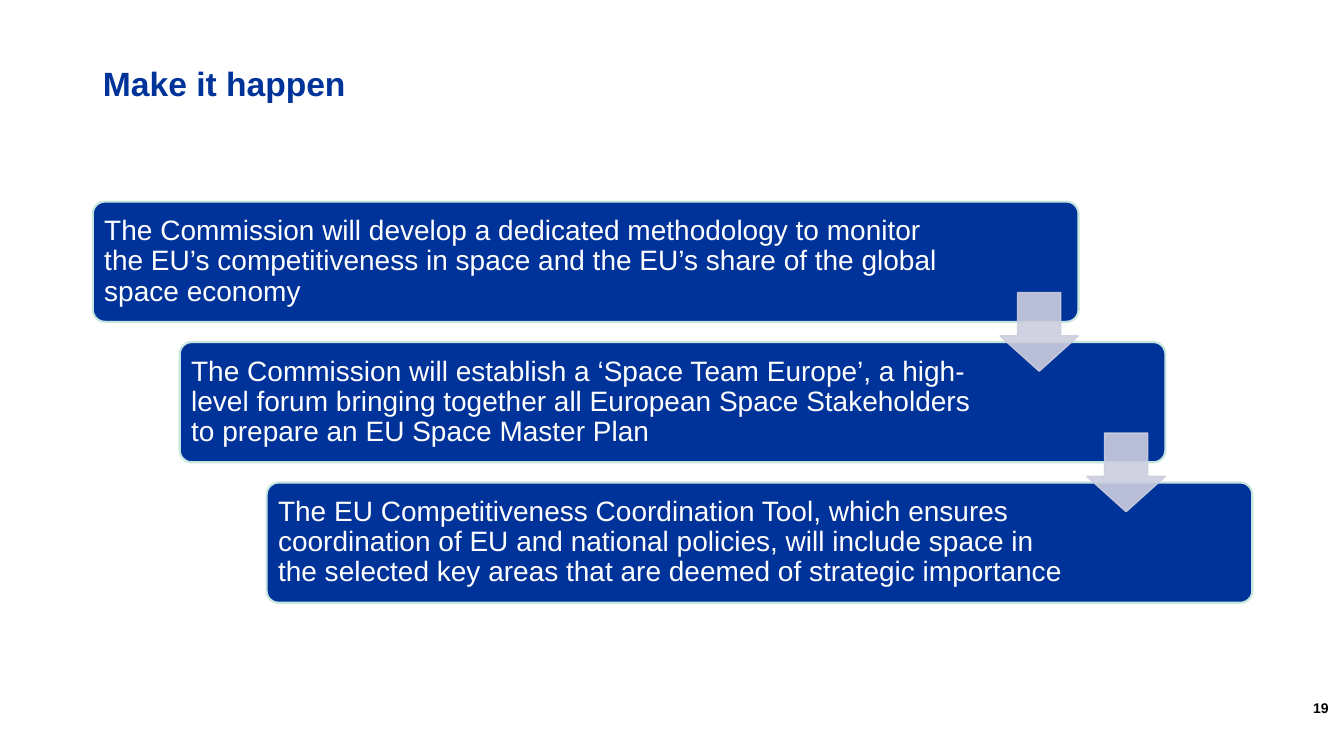
from lxml import etree
from pptx import Presentation
from pptx.dml.color import RGBColor
from pptx.enum.shapes import MSO_SHAPE
from pptx.enum.text import MSO_ANCHOR, MSO_AUTO_SIZE, PP_ALIGN
from pptx.oxml.ns import qn
from pptx.util import Cm, Pt

ROUND_RECT = MSO_SHAPE.ROUNDED_RECTANGLE
DOWN_ARROW = MSO_SHAPE.DOWN_ARROW
MIDDLE, BOTTOM = MSO_ANCHOR.MIDDLE, MSO_ANCHOR.BOTTOM
LEFT = PP_ALIGN.LEFT
NO_AUTOFIT = MSO_AUTO_SIZE.NONE

BLUE = RGBColor(0x00, 0x33, 0x99)
MINT = RGBColor(0xC6, 0xE5, 0xDF)
LAVENDER = RGBColor(0xCC, 0xCE, 0xDE)
WHITE = RGBColor(0xFF, 0xFF, 0xFF)
BLACK = RGBColor(0x00, 0x00, 0x00)
FONT = "Arial"

# Staircase geometry in centimetres
STEP_LEFT, STEP_TOP = 2.34, 5.08
STEP_W, STEP_H = 24.84, 3.03
SHIFT_X, SHIFT_Y = 2.19, 3.54
ARROW = 1.98
INSET = 0.2

# Each step: text and the right inset that keeps it clear of the arrows
STEPS = [
    ("The Commission will develop a dedicated methodology to monitor the EU’s "
     "competitiveness in space and the EU’s share of the global space economy", 3.3),
    ("The Commission will establish a ‘Space Team Europe’, a high-level forum "
     "bringing together all European Space Stakeholders to prepare an EU Space "
     "Master Plan", 4.37),
    ("The EU Competitiveness Coordination Tool, which ensures coordination of EU "
     "and national policies, will include space in the selected key areas that "
     "are deemed of strategic importance", 4.37),
]


def write(tf, text, size, color, bold=False, anchor=MIDDLE, spacing=None):
    tf.word_wrap = True
    tf.auto_size = NO_AUTOFIT
    tf.vertical_anchor = anchor
    p = tf.paragraphs[0]
    p.alignment = LEFT
    p.line_spacing = spacing
    r = p.add_run()
    r.text = text
    r.font.name = FONT
    r.font.size = Pt(size)
    r.font.bold = bold
    r.font.color.rgb = color


def add_box(slide, kind, left, top, width, height, fill, line, line_width):
    sp = slide.shapes.add_shape(kind, Cm(left), Cm(top), Cm(width), Cm(height))
    sp.shadow.inherit = False
    sp.fill.solid()
    sp.fill.fore_color.rgb = fill
    sp.line.color.rgb = line
    sp.line.width = Pt(line_width)
    return sp


def add_title(slide, text):
    sp = slide.shapes.title
    sp.left, sp.top, sp.width, sp.height = Cm(2.34), Cm(1.02), Cm(29.21), Cm(2.26)
    sp.fill.solid()
    sp.fill.fore_color.rgb = WHITE
    write(sp.text_frame, text, 24, BLUE, bold=True, spacing=0.9)


def add_step(slide, left, top, text, right_inset):
    sp = add_box(slide, ROUND_RECT, left, top, STEP_W, STEP_H, BLUE, MINT, 1.5)
    sp.adjustments[0] = 0.1
    tf = sp.text_frame
    tf.margin_left = tf.margin_top = tf.margin_bottom = Cm(INSET)
    tf.margin_right = Cm(right_inset)
    write(tf, text, 20, WHITE, spacing=0.9)


def add_arrow(slide, left, top):
    sp = add_box(slide, DOWN_ARROW, left, top, ARROW, ARROW, LAVENDER, LAVENDER, 1)
    sp.adjustments[0] = 0.45
    sp.adjustments[1] = 0.55
    # Arrow head takes 45% of the height, shaft 55% of the width
    sp.adjustments[0], sp.adjustments[1] = 0.55, 0.45
    for clr in sp._element.spPr.iter(qn("a:srgbClr")):
        etree.SubElement(clr, qn("a:alpha"), val="90000")


def add_page_number(slide, number):
    sp = slide.shapes.add_textbox(Cm(32.84), Cm(17.15), Cm(1.03), Cm(1.02))
    write(sp.text_frame, number, 10, BLACK, bold=True, anchor=BOTTOM)


def main():
    prs = Presentation()
    prs.slide_width, prs.slide_height = Cm(33.87), Cm(19.05)
    slide = prs.slides.add_slide(prs.slide_layouts[5])

    add_page_number(slide, "19")
    add_title(slide, "Make it happen")

    # Steps, each shifted right and down from the one before
    corners = [(STEP_LEFT + i * SHIFT_X, STEP_TOP + i * SHIFT_Y)
               for i in range(len(STEPS))]
    for (left, top), (text, right_inset) in zip(corners, STEPS):
        add_step(slide, left, top, text, right_inset)

    # Arrows centred on the gaps, flush with the upper step's right side
    for left, top in corners[:-1]:
        add_arrow(slide, left + STEP_W - ARROW,
                  top + (STEP_H + SHIFT_Y - ARROW) / 2)

    prs.save("out.pptx")


if __name__ == "__main__":
    main()
